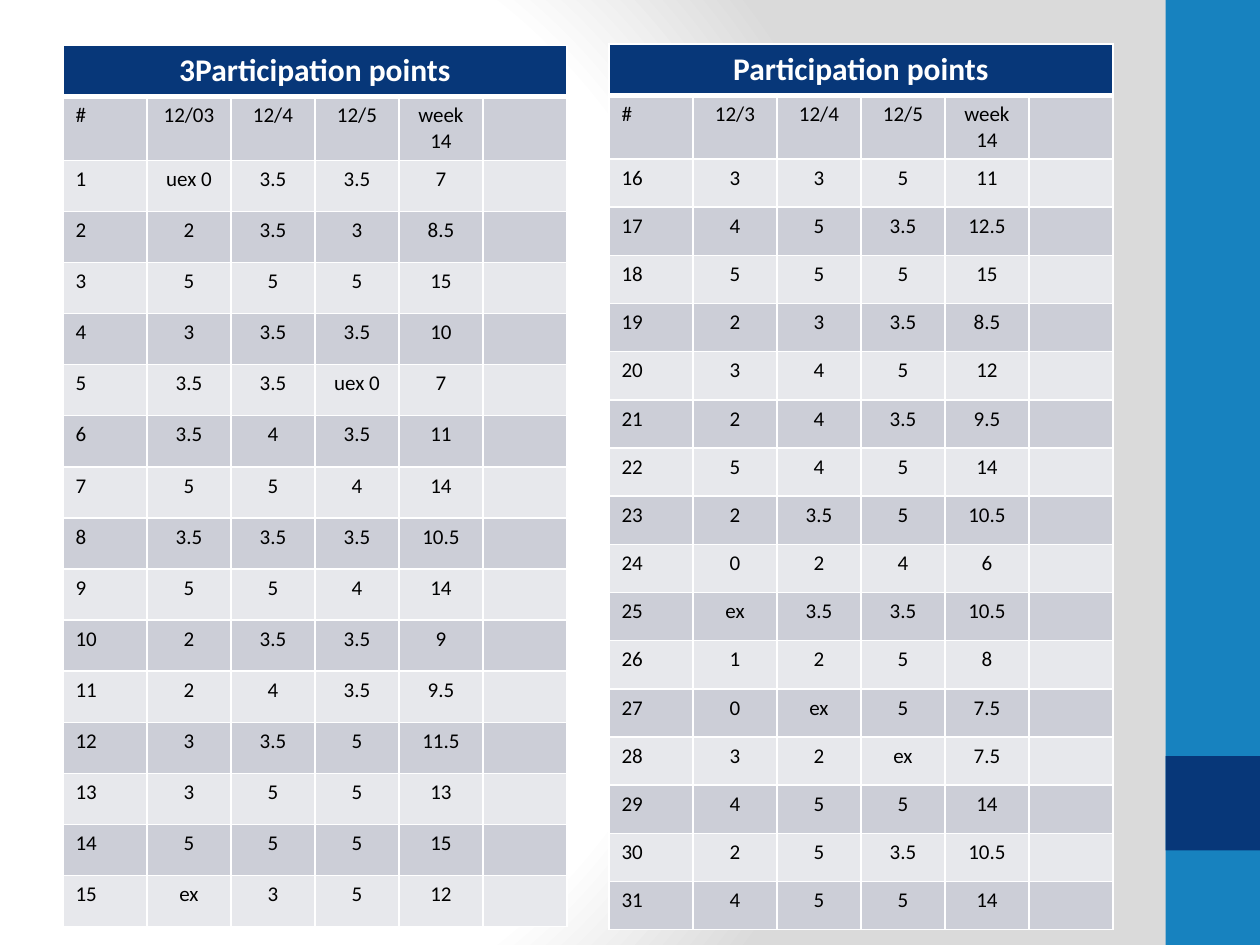
from lxml.etree import SubElement
from pptx import Presentation
from pptx.dml.color import RGBColor
from pptx.enum.shapes import MSO_SHAPE
from pptx.enum.text import PP_ALIGN
from pptx.oxml import parse_xml
from pptx.oxml.ns import nsdecls, qn
from pptx.util import Inches, Pt

COLORS = {
    "navy": "073779",
    "blue": "1782BF",
    "dark_band": "CCCED7",
    "light_band": "E7E8EC",
    "white": "FFFFFF",
    "black": "000000",
    "gray": "DADADA",
}
FONT = "Calibri"
COLUMN_COUNT = 6

# Each score row: three days, then the week's total.
TABLES = [
    {
        "title": "3Participation points",
        "header": "#,12/03,12/4,12/5,week 14",
        "first_number": 1,
        "scores": [
            "uex 0,3.5,3.5,7", "2,3.5,3,8.5", "5,5,5,15", "3,3.5,3.5,10",
            "3.5,3.5,uex 0,7", "3.5,4,3.5,11", "5,5,4,14", "3.5,3.5,3.5,10.5",
            "5,5,4,14", "2,3.5,3.5,9", "2,4,3.5,9.5", "3,3.5,5,11.5",
            "3,5,5,13", "5,5,5,15", "ex,3,5,12",
        ],
        "left_column": 0,
        "top": 0.36,
        "title_height": 6.9 / 17,
    },
    {
        "title": "Participation points",
        "header": "#,12/3,12/4,12/5,week 14",
        "first_number": 16,
        "scores": [
            "3,3,5,11", "4,5,3.5,12.5", "5,5,5,15", "2,3,3.5,8.5",
            "3,4,5,12", "2,4,3.5,9.5", "5,4,5,14", "2,3.5,5,10.5",
            "0,2,4,6", "ex,3.5,3.5,10.5", "1,2,5,8", "0,ex,5,7.5",
            "3,2,ex,7.5", "4,5,5,14", "2,5,3.5,10.5", "4,5,5,14",
        ],
        "left_column": 6.5,
        "top": 0.35,
        "title_height": 0.4,
    },
]


def write_text(cell, text, size=12, color="black", bold=False, align=PP_ALIGN.CENTER):
    paragraph = cell.text_frame.paragraphs[0]
    paragraph.alignment = align
    if not text:
        # An empty cell keeps the small size so that it does not stretch its row.
        SubElement(paragraph._p, qn("a:endParaRPr"), sz=str(size * 100))
        return
    run = paragraph.add_run()
    run.text = text
    run.font.name = FONT
    run.font.size = Pt(size)
    run.font.bold = bold
    run.font.color.rgb = RGBColor.from_string(COLORS[color])


def style_cell(cell, fill, top=1, bottom=1):
    """Fill the cell and draw white borders; widths are in points."""
    properties = cell._tc.get_or_add_tcPr()
    for side, width in (("L", 1), ("R", 1), ("T", top), ("B", bottom)):
        properties.append(parse_xml(
            f'<a:ln{side} {nsdecls("a")} w="{Pt(width)}"><a:solidFill>'
            f'<a:srgbClr val="{COLORS["white"]}"/></a:solidFill></a:ln{side}>'
        ))
    cell.fill.solid()
    cell.fill.fore_color.rgb = RGBColor.from_string(COLORS[fill])


presentation = Presentation()
presentation.slide_width = Inches(10)
presentation.slide_height = Inches(7.5)
width, height = presentation.slide_width, presentation.slide_height
slide = presentation.slides.add_slide(presentation.slide_layouts[6])

# Background: white fading to gray on the right
stops = "".join(
    f'<a:gs pos="{position * 1000}"><a:srgbClr val="{COLORS[color]}"/></a:gs>'
    for position, color in ((0, "white"), (75, "white"), (100, "gray"))
)
slide.element.cSld.insert(0, parse_xml(
    f'<p:bg {nsdecls("p", "a")}><p:bgPr><a:gradFill rotWithShape="1">'
    f'<a:gsLst>{stops}</a:gsLst><a:path path="circle">'
    '<a:fillToRect l="20000" t="50000" r="100000" b="50000"/></a:path>'
    '</a:gradFill><a:effectLst/></p:bgPr></p:bg>'
))

# Side bar with its darker block, as shares of the slide height
for color, top_share, height_share in (("blue", 0, 1), ("navy", 0.8, 0.1)):
    bar = slide.shapes.add_shape(
        MSO_SHAPE.RECTANGLE, int(width * 0.925), int(height * top_share),
        int(width * 0.075), int(height * height_share),
    )
    bar.shadow.inherit = False
    bar.fill.solid()
    bar.fill.fore_color.rgb = RGBColor.from_string(COLORS[color])
    bar.line.fill.background()

# Score tables
table_width = int(width * 0.4)
column_width = table_width / COLUMN_COUNT
table_height = Inches(6.9)
for content in TABLES:
    rows = [content["header"].split(",")]
    for number, scores in enumerate(content["scores"], content["first_number"]):
        rows.append([str(number), *scores.split(",")])

    table = slide.shapes.add_table(
        len(rows) + 1, COLUMN_COUNT,
        int(width * 0.05 + content["left_column"] * column_width),
        Inches(content["top"]), table_width, table_height,
    ).table
    table.horz_banding = False
    title_height = Inches(content["title_height"])
    for row in table.rows:
        row.height = int((table_height - title_height) / len(rows))
    table.rows[0].height = title_height

    for column in range(COLUMN_COUNT):
        style_cell(table.cell(0, column), "navy", bottom=3)
    table.cell(0, 0).merge(table.cell(0, COLUMN_COUNT - 1))
    write_text(table.cell(0, 0), content["title"], size=18, color="white", bold=True)

    for row_index, values in enumerate(rows, 1):
        band = "dark_band" if row_index % 2 else "light_band"
        for column, value in enumerate([*values, ""]):
            cell = table.cell(row_index, column)
            style_cell(cell, band, top=3 if row_index == 1 else 1)
            write_text(cell, value, align=PP_ALIGN.CENTER if column else PP_ALIGN.LEFT)

presentation.save("out.pptx")
